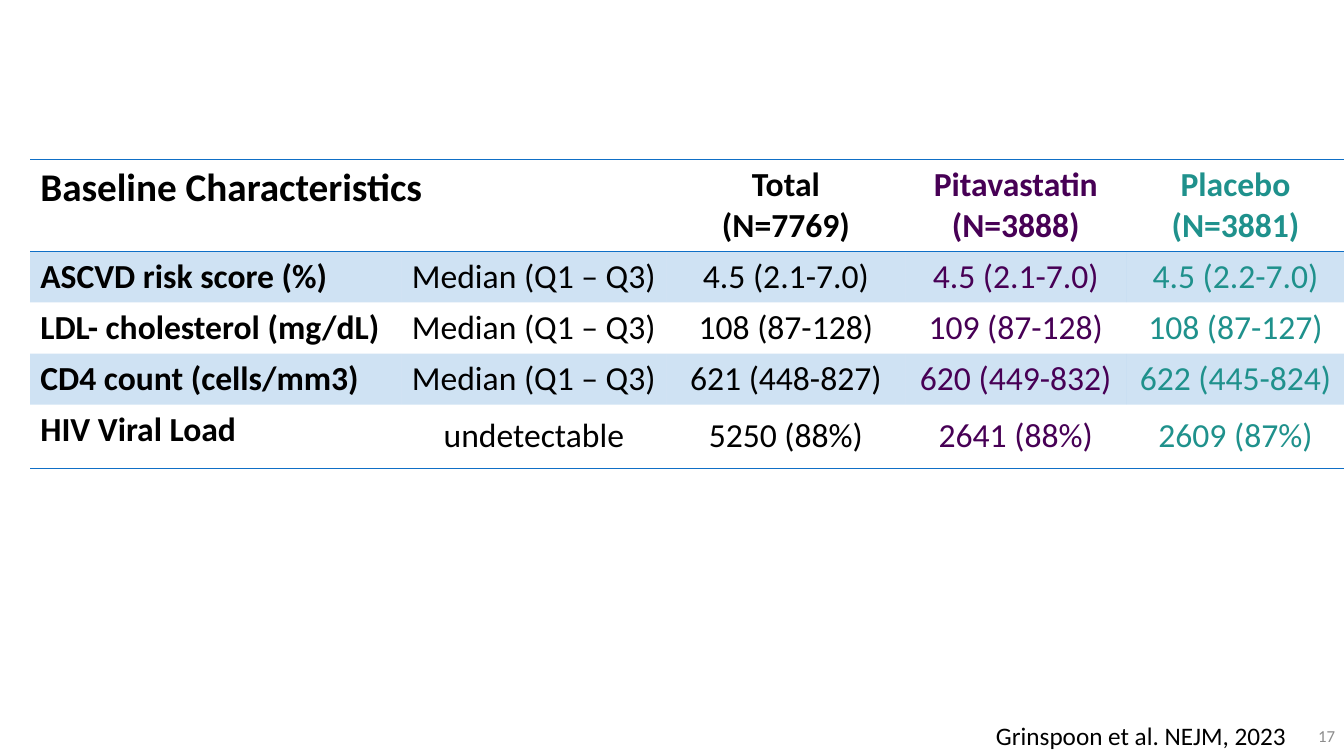
from dataclasses import dataclass

from lxml.etree import SubElement
from pptx import Presentation
from pptx.dml.color import RGBColor
from pptx.enum.text import MSO_ANCHOR as ANCHOR, PP_ALIGN as ALIGN
from pptx.oxml.ns import qn
from pptx.util import Inches, Pt


@dataclass(frozen=True)
class Theme:
    font: str = "Calibri"
    black: str = "000000"
    grey: str = "8C8C8C"
    blue: str = "0F6FC6"
    purple: str = "470055"
    teal: str = "1F918C"
    title_size: int = 28
    body_size: int = 24
    source_size: int = 18
    number_size: int = 12
    band_alpha: int = 20
    rule_width: int = 1
    no_grid_style: str = "{2D5ABB26-0587-4C30-8999-92F81FD0307C}"


THEME = Theme()

COLUMN_WIDTHS = [3.68, 2.63, 2.37, 2.19, 2.17]
ROW_HEIGHTS = [0.91, 0.5, 0.5, 0.5, 0.63]
COLUMN_COLORS = [THEME.black, THEME.black, THEME.black, THEME.purple, THEME.teal]
ROWS = [
    ["Baseline Characteristics", "", "Total\n(N=7769)", "Pitavastatin (N=3888)", "Placebo\n(N=3881)"],
    ["ASCVD risk score (%)", "Median (Q1 – Q3)", "4.5 (2.1-7.0)", "4.5 (2.1-7.0)", "4.5 (2.2-7.0)"],
    ["LDL- cholesterol (mg/dL)", "Median (Q1 – Q3)", "108 (87-128)", "109 (87-128)", "108 (87-127)"],
    ["CD4 count (cells/mm3)", "Median (Q1 – Q3)", "621 (448-827)", "620 (449-832)", "622 (445-824)"],
    ["HIV Viral Load", "undetectable", "5250 (88%)", "2641 (88%)", "2609 (87%)"],
]


def write_text(tf, text, size, color=THEME.black, bold=False, align=ALIGN.LEFT):
    """Fill a text frame, one paragraph per line of text."""
    tf.text = text
    for p in tf.paragraphs:
        p.alignment = align
        for r in p.runs:
            r.font.name = THEME.font
            r.font.size = Pt(size)
            r.font.bold = bold
            r.font.color.rgb = RGBColor.from_string(color)


def add_rule(cell, side):
    """Draw one cell border; side is 'T' or 'B'. Call before filling the cell."""
    ln = SubElement(cell._tc.get_or_add_tcPr(), qn(f"a:ln{side}"), w=str(Pt(THEME.rule_width)))
    fill = SubElement(ln, qn("a:solidFill"))
    SubElement(fill, qn("a:srgbClr"), val=THEME.blue)


def fill_band(cell):
    cell.fill.solid()
    cell.fill.fore_color.rgb = RGBColor.from_string(THEME.blue)
    color = cell._tc.tcPr.find(f"{qn('a:solidFill')}/{qn('a:srgbClr')}")
    SubElement(color, qn("a:alpha"), val=str(THEME.band_alpha * 1000))


def format_cell(cell, row, col):
    header, label = row == 0, col == 0
    write_text(
        cell.text_frame, ROWS[row][col],
        size=THEME.title_size if header and label else THEME.body_size,
        color=COLUMN_COLORS[col],
        bold=header or label,
        align=ALIGN.LEFT if label else ALIGN.CENTER,
    )
    cell.vertical_anchor = ANCHOR.TOP if label else ANCHOR.MIDDLE
    if header:
        add_rule(cell, "T")
    if header or row == len(ROWS) - 1:
        add_rule(cell, "B")
    if row % 2:
        fill_band(cell)
    else:
        cell.fill.background()


def add_baseline_table(slide, left, top):
    frame = slide.shapes.add_table(
        len(ROWS), len(COLUMN_WIDTHS), Inches(left), Inches(top),
        Inches(sum(COLUMN_WIDTHS)), Inches(sum(ROW_HEIGHTS)),
    )
    table = frame.table
    table.first_row = table.horz_banding = False
    table._tbl.tblPr.find(qn("a:tableStyleId")).text = THEME.no_grid_style
    for column, width in zip(table.columns, COLUMN_WIDTHS):
        column.width = Inches(width)
    for row, height in zip(table.rows, ROW_HEIGHTS):
        row.height = Inches(height)
    for row in range(len(ROWS)):
        for col in range(len(COLUMN_WIDTHS)):
            format_cell(table.cell(row, col), row, col)
    table.cell(0, 0).merge(table.cell(0, 1))


def add_label(slide, text, left, top, width, height, wrap=True, anchor=ANCHOR.TOP, **text_format):
    sp = slide.shapes.add_textbox(Inches(left), Inches(top), Inches(width), Inches(height))
    tf = sp.text_frame
    tf.word_wrap = wrap
    tf.vertical_anchor = anchor
    write_text(tf, text, **text_format)


def add_footer(slide, left, top, width, height):
    """Place the source at the left of the box and the slide number at its right."""
    number_width = 3
    add_label(slide, "17", left + width - number_width, top, number_width, height,
              anchor=ANCHOR.MIDDLE, size=THEME.number_size, color=THEME.grey, align=ALIGN.RIGHT)
    add_label(slide, "Grinspoon et al. NEJM, 2023", left, top, 3.11, height,
              wrap=False, size=THEME.source_size)


def main():
    prs = Presentation()
    prs.slide_width, prs.slide_height = Inches(13.33), Inches(7.5)
    slide = prs.slides.add_slide(prs.slide_layouts[6])
    add_baseline_table(slide, left=0.3, top=1.58)
    add_footer(slide, left=9.78, top=7.1, width=3.56, height=0.4)
    prs.save("out.pptx")


if __name__ == "__main__":
    main()
